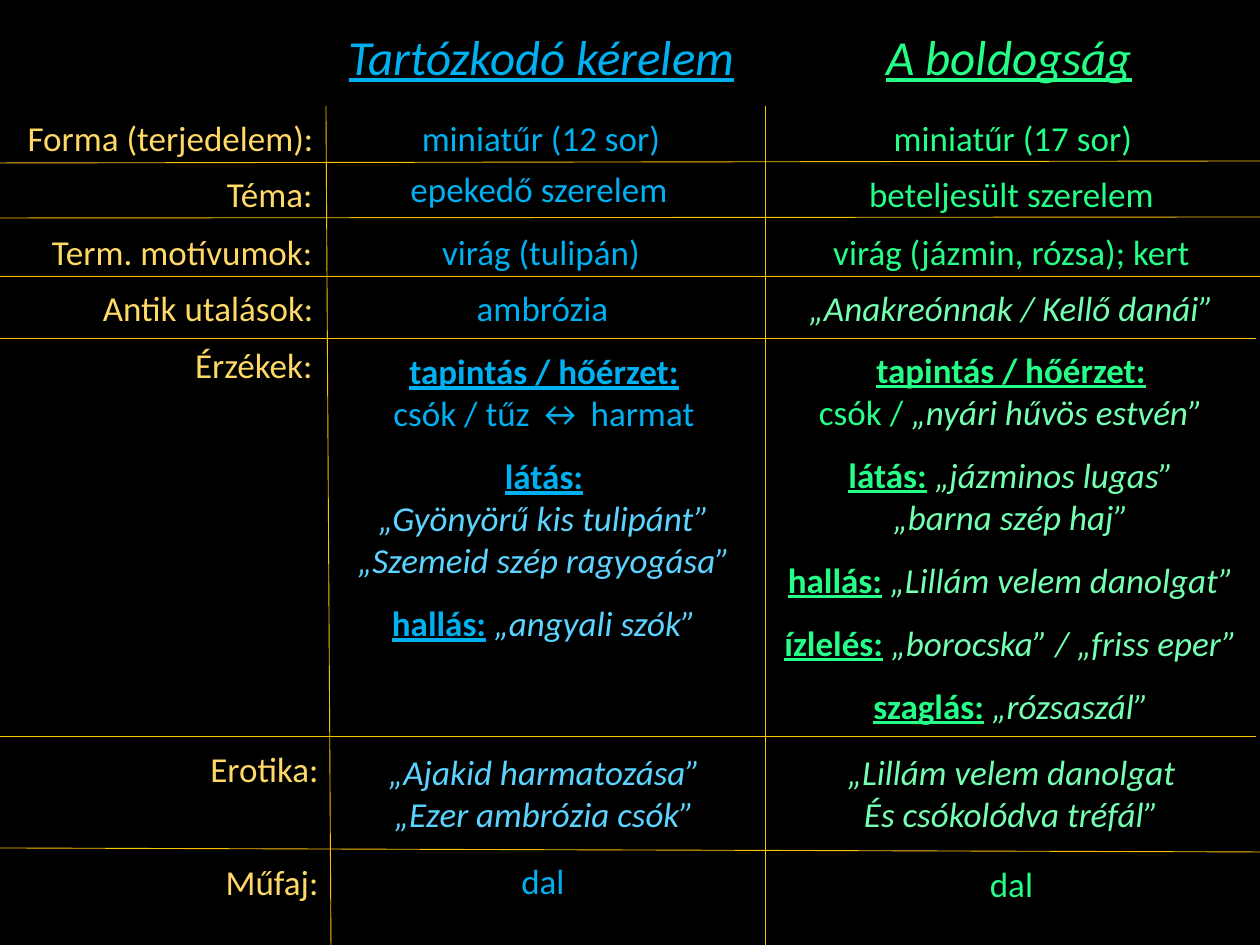
from dataclasses import dataclass

import pptx
import pptx.dml.color
import pptx.enum.shapes
import pptx.enum.text
import pptx.oxml
import pptx.oxml.ns
import pptx.util

ALIGN = pptx.enum.text.PP_ALIGN


@dataclass(frozen=True)
class Theme:
    font: str = "Calibri"
    background: str = "000000"
    rule: str = "FFC000"
    label: str = "FFD966"
    left: str = "00B0F0"
    left_quote: str = "5BD4FF"
    right: str = "25FF88"
    right_quote: str = "75FFB3"
    heading_size: int = 28
    text_size: int = 20
    rule_width: float = 0.5
    gap: int = 12


THEME = Theme()
PX = 914400 / 126  # EMU in one px

LEFT = {"color": THEME.left, "quote_color": THEME.left_quote}
RIGHT = {"color": THEME.right, "quote_color": THEME.right_quote}
LABEL = {"color": THEME.label, "align": ALIGN.RIGHT}
HEADING = {"size": THEME.heading_size, "italic": True, "underline": True}

# Boxes are left, top, width, height
HEADING_BOXES = [(311, 21, 461, 69), (766, 21, 486, 69)]
SENSE_BOXES = [(319, 341, 450, 311), (766, 344, 490, 386)]

LABELS = [
    ("Forma (terjedelem):", (0, 112, 326, 52)),
    ("Téma:", (1, 168, 324, 52)),
    ("Term. motívumok:", (1, 226, 324, 52)),
    ("Antik utalások:", (4, 281, 322, 52)),
    ("Érzékek:", (-1, 338, 326, 52)),
    ("Erotika:", (11, 738, 320, 62)),
    ("Műfaj:", (0, 853, 331, 57)),
]

# A paragraph is a string, or a list of (text, style) runs
LEFT_CELLS = [
    (["miniatűr (12 sor)"], (316, 112, 450, 52)),
    (["epekedő szerelem"], (312, 160, 454, 58)),
    (["virág (tulipán)"], (318, 226, 446, 52)),
    (["ambrózia"], (319, 281, 447, 52)),
    ([[("„Ajakid harmatozása”", "quote")], [("„Ezer ambrózia csók”", "quote")]],
     (324, 738, 441, 108)),
    (["dal"], (330, 852, 426, 58)),
]
RIGHT_CELLS = [
    (["miniatűr (17 sor)"], (766, 112, 494, 52)),
    (["beteljesült szerelem"], (765, 168, 493, 52)),
    (["virág (jázmin, rózsa); kert"], (765, 226, 493, 52)),
    ([[("„Anakreónnak / Kellő danái”", "quote")]], (767, 282, 489, 52)),
    ([[("„Lillám velem danolgat\nÉs csókolódva tréfál”", "quote")]],
     (765, 738, 493, 108)),
    (["dal"], (766, 856, 491, 54)),
]

LEFT_SENSES = [
    [("tapintás / hőérzet:\n", "sense"), ("csók / tűz ↔ harmat", "plain")],
    [("látás:\n", "sense"),
     ("„Gyönyörű kis tulipánt”\n„Szemeid szép ragyogása”", "quote")],
    [("hallás:", "sense"), (" ", "plain"), ("„angyali szók”", "quote")],
]
RIGHT_SENSES = [
    [("tapintás / hőérzet:\n", "sense"), ("csók / ", "plain"),
     ("„nyári hűvös estvén”", "quote")],
    [("látás:", "sense"), (" ", "plain"),
     ("„jázminos lugas”\n„barna szép haj”", "quote")],
    [("hallás:", "sense"), (" ", "plain"), ("„Lillám velem danolgat”", "quote")],
    [("ízlelés:", "sense"), (" „borocska” / „friss eper”", "quote")],
    [("szaglás:", "sense"), (" „rózsaszál”", "quote")],
]

# Rules are x1, y1, x2, y2
RULES = [
    (765, 106, 765, 945),
    (326, 106, 331, 946),
    (0, 163, 1260, 161),
    (-1, 218, 1275, 217),
    (0, 276, 1265, 276),
    (-1, 338, 1256, 338),
    (1256, 736, -1, 736),
    (0, 848, 1265, 852),
]


def px(value):
    return pptx.util.Emu(round(value * PX))


def rgb(value):
    return pptx.dml.color.RGBColor.from_string(value)


def add_run(p, text, *, color, size, bold=False, italic=False, underline=False):
    """Add text to a paragraph, with each newline as a line break."""
    for i, line in enumerate(text.split("\n")):
        if i:
            p.add_line_break()
        if line:
            r = p.add_run()
            r.text = line
            r.font.name = THEME.font
            r.font.size = pptx.util.Pt(size)
            r.font.color.rgb = rgb(color)
            r.font.bold = bold
            r.font.italic = italic
            r.font.underline = underline


def clear_bullet(p):
    p_pr = p._p.get_or_add_pPr()
    p_pr.set("marL", "0")
    p_pr.set("indent", "0")
    p_pr.append(pptx.oxml.parse_xml(
        f"<a:buNone {pptx.oxml.ns.nsdecls('a')}/>"))


def write_text(sp, box, paragraphs, *, color, quote_color=None, align=ALIGN.CENTER,
               size=THEME.text_size, gap=0, **font):
    """Place a text box or placeholder and fill it with styled paragraphs."""
    sp.left, sp.top, sp.width, sp.height = map(px, box)
    tf = sp.text_frame
    tf.word_wrap = True
    tf.auto_size = pptx.enum.text.MSO_AUTO_SIZE.NONE
    tf.vertical_anchor = pptx.enum.text.MSO_ANCHOR.MIDDLE
    styles = {
        "plain": {"color": color, **font},
        "sense": {"color": color, "bold": True, "underline": True},
        "quote": {"color": quote_color, "italic": True},
    }
    for i, runs in enumerate(paragraphs):
        p = tf.add_paragraph() if i else tf.paragraphs[0]
        if sp.is_placeholder:
            clear_bullet(p)
        p.alignment = align
        p.space_before = pptx.util.Pt(gap if i else 0)
        if isinstance(runs, str):
            runs = [(runs, "plain")]
        for text, style in runs:
            add_run(p, text, size=size, **styles[style])


def add_text(s, box, paragraphs, **fmt):
    write_text(s.shapes.add_textbox(0, 0, 0, 0), box, paragraphs, **fmt)


def add_rule(s, ends):
    line = s.shapes.add_connector(
        pptx.enum.shapes.MSO_CONNECTOR.STRAIGHT, *map(px, ends))
    line.line.color.rgb = rgb(THEME.rule)
    line.line.width = pptx.util.Pt(THEME.rule_width)
    line._element.spPr.append(pptx.oxml.parse_xml(
        f"<a:effectLst {pptx.oxml.ns.nsdecls('a')}/>"))


def main():
    prs = pptx.Presentation()
    prs.slide_width, prs.slide_height = px(1260), px(945)
    s = prs.slides.add_slide(prs.slide_layouts.get_by_name("Two Content"))
    s.background.fill.solid()
    s.background.fill.fore_color.rgb = rgb(THEME.background)

    title, left_body, right_body = list(s.placeholders)[:3]
    write_text(title, HEADING_BOXES[0], ["Tartózkodó kérelem"], **LEFT, **HEADING)
    add_text(s, HEADING_BOXES[1], ["A boldogság"], **RIGHT, **HEADING)
    write_text(left_body, SENSE_BOXES[0], LEFT_SENSES, gap=THEME.gap, **LEFT)
    write_text(right_body, SENSE_BOXES[1], RIGHT_SENSES, gap=THEME.gap, **RIGHT)

    for label, box in LABELS:
        add_text(s, box, [label], **LABEL)
    for cells, fmt in ((LEFT_CELLS, LEFT), (RIGHT_CELLS, RIGHT)):
        for paragraphs, box in cells:
            add_text(s, box, paragraphs, **fmt)
    for ends in RULES:
        add_rule(s, ends)

    prs.save("out.pptx")


if __name__ == "__main__":
    main()
